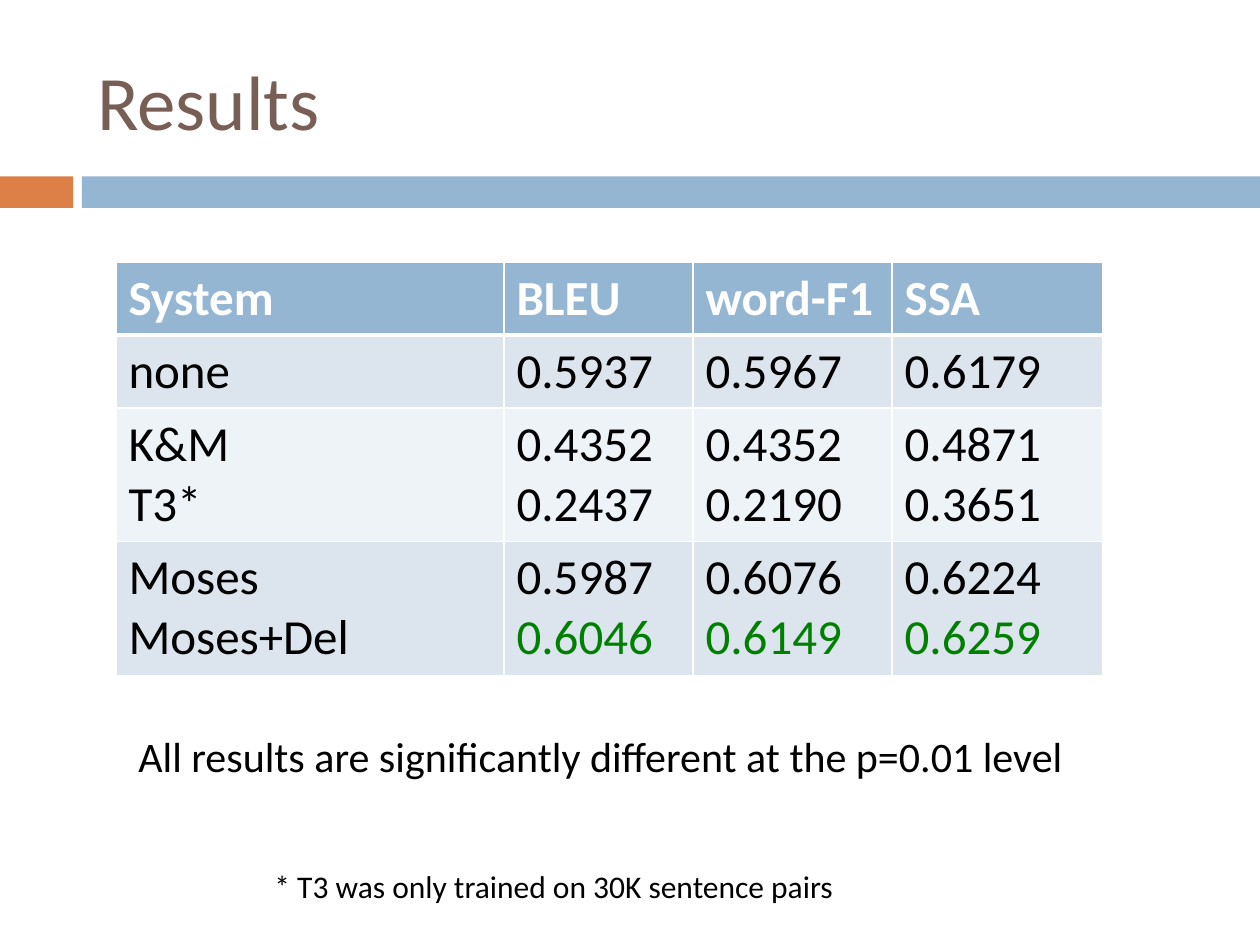
from lxml import etree
from pptx import Presentation
from pptx.dml.color import RGBColor
from pptx.enum.shapes import MSO_SHAPE
from pptx.enum.text import MSO_ANCHOR, PP_ALIGN
from pptx.oxml.ns import qn
from pptx.util import Inches, Pt

RECTANGLE = MSO_SHAPE.RECTANGLE
MIDDLE = MSO_ANCHOR.MIDDLE
LEFT = PP_ALIGN.LEFT
TITLE_ONLY = 5

# Content: each table row is a list of cells, each cell a tuple of lines
TITLE = "Results"
ROWS = [
    [("System",), ("BLEU",), ("word-F1",), ("SSA",)],
    [("none",), ("0.5937",), ("0.5967",), ("0.6179",)],
    [("K&M", "T3*"), ("0.4352", "0.2437"), ("0.4352", "0.2190"), ("0.4871", "0.3651")],
    [("Moses", "Moses+Del"), ("0.5987", "0.6046"), ("0.6076", "0.6149"), ("0.6224", "0.6259")],
]
BEST = {"0.6046", "0.6149", "0.6259"}
NOTES = [
    ("All results are significantly different at the p=0.01 level", "note", (1, 5.75, 7.83, 0.5)),
    ("* T3 was only trained on 30K sentence pairs", "footnote", (2.08, 6.83, 5.08, 0.4)),
]

# Theme and layout, in inches and points
THEME = {
    "font": "Calibri",
    "accent": "DD8047",
    "band": "94B6D2",
    "stripes": ("EEF3F7", "DCE5EE"),
    "border": "FFFFFF",
    "title": {"size": 44, "color": "775F55"},
    "header": {"size": 28, "color": "FFFFFF", "bold": True},
    "body": {"size": 28, "color": "000000", "bold": False},
    "best": {"size": 28, "color": "008000", "bold": False},
    "note": {"size": 24, "color": "000000"},
    "footnote": {"size": 18, "color": "000000"},
}
SLIDE_WIDTH, SLIDE_HEIGHT = 10, 7.5
BAND_TOP, BAND_HEIGHT = 1.4, 0.25
ACCENT_WIDTH, BAND_LEFT = 0.58, 0.65
TITLE_BOX = (0.67, 0.25, 8.92, 1.08)
TABLE_LEFT, TABLE_TOP = 0.92, 2.08
COLUMN_WIDTHS = (3.08, 1.5, 1.58, 1.67)
LINE_HEIGHT, ROW_PADDING = 0.48, 0.1
THIN, THICK = 1, 3


def inches(box):
    return [Inches(value) for value in box]


def write(paragraph, text, style):
    run = paragraph.add_run()
    run.text = text
    values = {"name": THEME["font"], **THEME[style]}
    values["size"] = Pt(values["size"])
    run.font.color.rgb = RGBColor.from_string(values.pop("color"))
    for name, value in values.items():
        setattr(run.font, name, value)


def add_bar(slide, left, width, color):
    box = inches((left, BAND_TOP, width, BAND_HEIGHT))
    shape = slide.shapes.add_shape(RECTANGLE, *box)
    shape.shadow.inherit = False
    shape.fill.solid()
    shape.fill.fore_color.rgb = RGBColor.from_string(color)
    shape.line.fill.background()


def set_borders(cell, row):
    properties = cell._tc.get_or_add_tcPr()
    widths = {
        "a:lnL": THIN,
        "a:lnR": THIN,
        "a:lnT": THICK if row == 1 else THIN,
        "a:lnB": THICK if row == 0 else THIN,
    }
    for tag, width in widths.items():
        line = etree.SubElement(properties, qn(tag), w=str(Pt(width)))
        fill = etree.SubElement(line, qn("a:solidFill"))
        etree.SubElement(fill, qn("a:srgbClr"), val=THEME["border"])


def fill_cell(cell, lines, row):
    set_borders(cell, row)
    cell.fill.solid()
    color = THEME["stripes"][row % 2] if row else THEME["band"]
    cell.fill.fore_color.rgb = RGBColor.from_string(color)
    for index, text in enumerate(lines):
        frame = cell.text_frame
        paragraph = frame.add_paragraph() if index else frame.paragraphs[0]
        style = "header" if row == 0 else "best" if text in BEST else "body"
        write(paragraph, text, style)


def add_results_table(slide):
    heights = [LINE_HEIGHT * len(cells[0]) + ROW_PADDING for cells in ROWS]
    box = inches((TABLE_LEFT, TABLE_TOP, sum(COLUMN_WIDTHS), sum(heights)))
    table = slide.shapes.add_table(len(ROWS), len(COLUMN_WIDTHS), *box).table
    for column, width in zip(table.columns, COLUMN_WIDTHS):
        column.width = Inches(width)
    for row, (cells, height) in enumerate(zip(ROWS, heights)):
        table.rows[row].height = Inches(height)
        for column, lines in enumerate(cells):
            fill_cell(table.cell(row, column), lines, row)


def main():
    presentation = Presentation()
    presentation.slide_width = Inches(SLIDE_WIDTH)
    presentation.slide_height = Inches(SLIDE_HEIGHT)
    slide = presentation.slides.add_slide(presentation.slide_layouts[TITLE_ONLY])

    # Band under the title
    add_bar(slide, 0, ACCENT_WIDTH, THEME["accent"])
    add_bar(slide, BAND_LEFT, SLIDE_WIDTH - BAND_LEFT, THEME["band"])

    # Title
    title = slide.shapes.title
    title.left, title.top, title.width, title.height = inches(TITLE_BOX)
    title.text_frame.vertical_anchor = MIDDLE
    paragraph = title.text_frame.paragraphs[0]
    paragraph.alignment = LEFT
    write(paragraph, TITLE, "title")

    # Results and notes
    add_results_table(slide)
    for text, style, box in NOTES:
        frame = slide.shapes.add_textbox(*inches(box)).text_frame
        frame.word_wrap = True
        write(frame.paragraphs[0], text, style)

    presentation.save("out.pptx")


if __name__ == "__main__":
    main()
